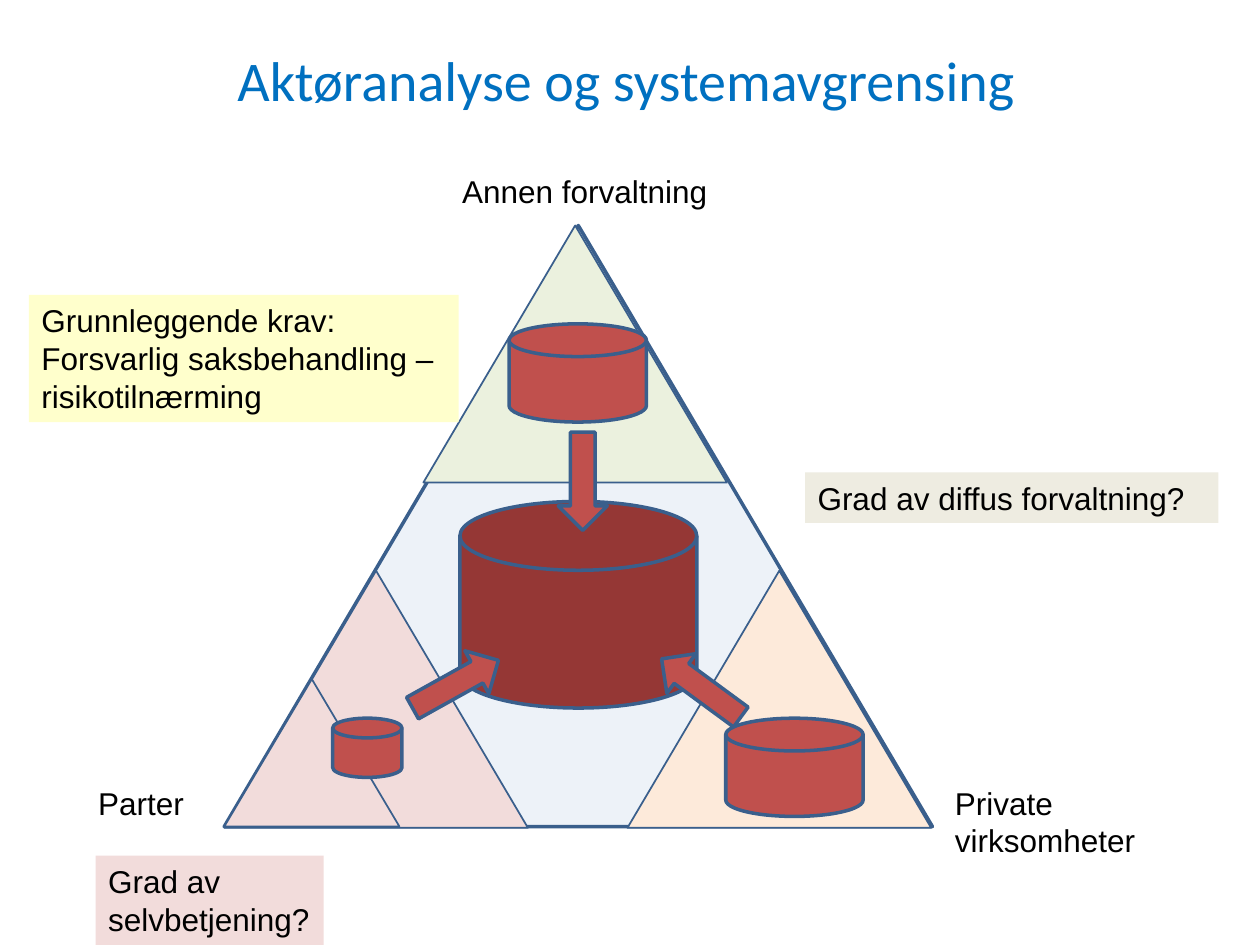
"""Build a slide showing actors and system boundaries as a divided triangle."""
from dataclasses import dataclass

from lxml.etree import SubElement
from pptx import Presentation
from pptx.dml.color import RGBColor
from pptx.enum.shapes import MSO_SHAPE as Shape
from pptx.enum.text import MSO_ANCHOR as Anchor, MSO_AUTO_SIZE as AutoSize, PP_ALIGN as Align
from pptx.oxml.ns import qn
from pptx.util import Inches, Pt


@dataclass(frozen=True)
class Theme:
    """Colours, fonts and type sizes of the slide."""
    title: str = "0070C0"
    text: str = "000000"
    outline: str = "3A5F8C"
    system: str = "4F81BD"
    parties: str = "F2DCDB"
    agencies: str = "EBF1DE"
    companies: str = "FDEADA"
    core: str = "953735"
    store: str = "C0504D"
    diffuse: str = "EEECE1"
    demand: str = "FFFFCC"
    title_font: str = "Calibri"
    body_font: str = "Arial"
    title_size: int = 32
    body_size: int = 18


THEME = Theme()


def set_all(target, values):
    """Set every attribute in a dict of format values."""
    for name, value in values.items():
        setattr(target, name, value)


def style_text(paragraph, font, size, color, align):
    """Give a paragraph its font and alignment."""
    set_all(paragraph, {"alignment": align})
    set_all(paragraph.font, {"name": font, "size": Pt(size)})
    paragraph.font.color.rgb = RGBColor.from_string(color)


def add_title(slide, text):
    """Place and fill the title placeholder."""
    title = slide.shapes.title
    set_all(title, {"left": Inches(0.47), "top": Inches(0),
                    "width": Inches(9), "height": Inches(1.25)})
    title.text_frame.text = text
    title.text_frame.vertical_anchor = Anchor.MIDDLE
    style_text(title.text_frame.paragraphs[0], THEME.title_font,
               THEME.title_size, THEME.title, Align.CENTER)


def add_outlined(slide, kind, box, fill, weight=2, rotation=0, opacity=100):
    """Add a filled preset shape with the common outline."""
    shape = slide.shapes.add_shape(kind, *map(Inches, box))
    shape.shadow.inherit = False
    shape.rotation = rotation
    shape.fill.solid()
    shape.fill.fore_color.rgb = RGBColor.from_string(fill)
    shape.line.color.rgb = RGBColor.from_string(THEME.outline)
    shape.line.width = Pt(weight)
    if opacity < 100:
        color = shape._element.spPr.find(qn("a:solidFill")).find(qn("a:srgbClr"))
        SubElement(color, qn("a:alpha")).set("val", str(opacity * 1000))


def add_label(slide, box, lines, fill=None, wrap=False):
    """Add left-aligned text lines, on a coloured panel if a fill is given."""
    label = slide.shapes.add_textbox(*map(Inches, box))
    if fill:
        label.fill.solid()
        label.fill.fore_color.rgb = RGBColor.from_string(fill)
    frame = label.text_frame
    frame.text = "\n".join(lines)
    set_all(frame, {"word_wrap": wrap, "auto_size": AutoSize.SHAPE_TO_FIT_TEXT,
                    "vertical_anchor": Anchor.TOP})
    for paragraph in frame.paragraphs:
        style_text(paragraph, THEME.body_font, THEME.body_size, THEME.text, Align.LEFT)


def add_zones(slide):
    """Draw the whole system and the zone of each actor in its corners."""
    add_outlined(slide, Shape.ISOSCELES_TRIANGLE, (1.78, 1.79, 5.62, 4.77),
                 THEME.system, opacity=10)
    zone_size, self_service_size = (2.41, 2.04), (1.39, 1.17)
    zones = [
        ((1.78, 4.53), zone_size, THEME.parties),
        ((1.78, 5.39), self_service_size, THEME.parties),
        ((3.36, 1.79), zone_size, THEME.agencies),
        ((4.98, 4.53), zone_size, THEME.companies),
    ]
    for corner, size, fill in zones:
        add_outlined(slide, Shape.ISOSCELES_TRIANGLE, corner + size, fill, weight=1)


def add_data_flow(slide):
    """Draw the central store, the actors' stores and the arrows between them."""
    disk = Shape.FLOWCHART_MAGNETIC_DISK
    add_outlined(slide, disk, (3.65, 3.98, 1.88, 1.64), THEME.core)
    for left, top, rotation in [(4.43, 3.43, 0), (3.42, 5.04, 240.9), (5.37, 5.07, 126.3)]:
        add_outlined(slide, Shape.DOWN_ARROW, (left, top, 0.39, 0.78),
                     THEME.store, rotation=rotation)
    for box in [(4.04, 2.57, 1.09, 0.78), (2.64, 5.7, 0.55, 0.47), (5.76, 5.7, 1.09, 0.78)]:
        add_outlined(slide, disk, box, THEME.store)


def main():
    """Build and save the slide."""
    deck = Presentation()
    set_all(deck, {"slide_width": Inches(10), "slide_height": Inches(7.5)})
    slide = deck.slides.add_slide(deck.slide_layouts[5])
    add_title(slide, "Aktøranalyse og systemavgrensing")
    add_zones(slide)
    add_label(slide, (0.68, 6.17, 0.89, 0.4), ["Parter"])
    add_label(slide, (3.57, 1.32, 2.17, 0.4), ["Annen forvaltning"])
    add_label(slide, (7.48, 6.17, 1.65, 0.71), ["Private", "virksomheter"])
    add_data_flow(slide)
    add_label(slide, (0.76, 6.79, 1.81, 0.71), ["Grad av", "selvbetjening?"], THEME.parties)
    add_label(slide, (6.39, 3.75, 3.28, 0.4), ["Grad av diffus forvaltning?"],
              THEME.diffuse, wrap=True)
    add_label(slide, (0.23, 2.34, 3.41, 1.01),
              ["Grunnleggende krav:", "Forsvarlig saksbehandling –", "risikotilnærming"],
              THEME.demand)
    deck.save("out.pptx")


if __name__ == "__main__":
    main()
